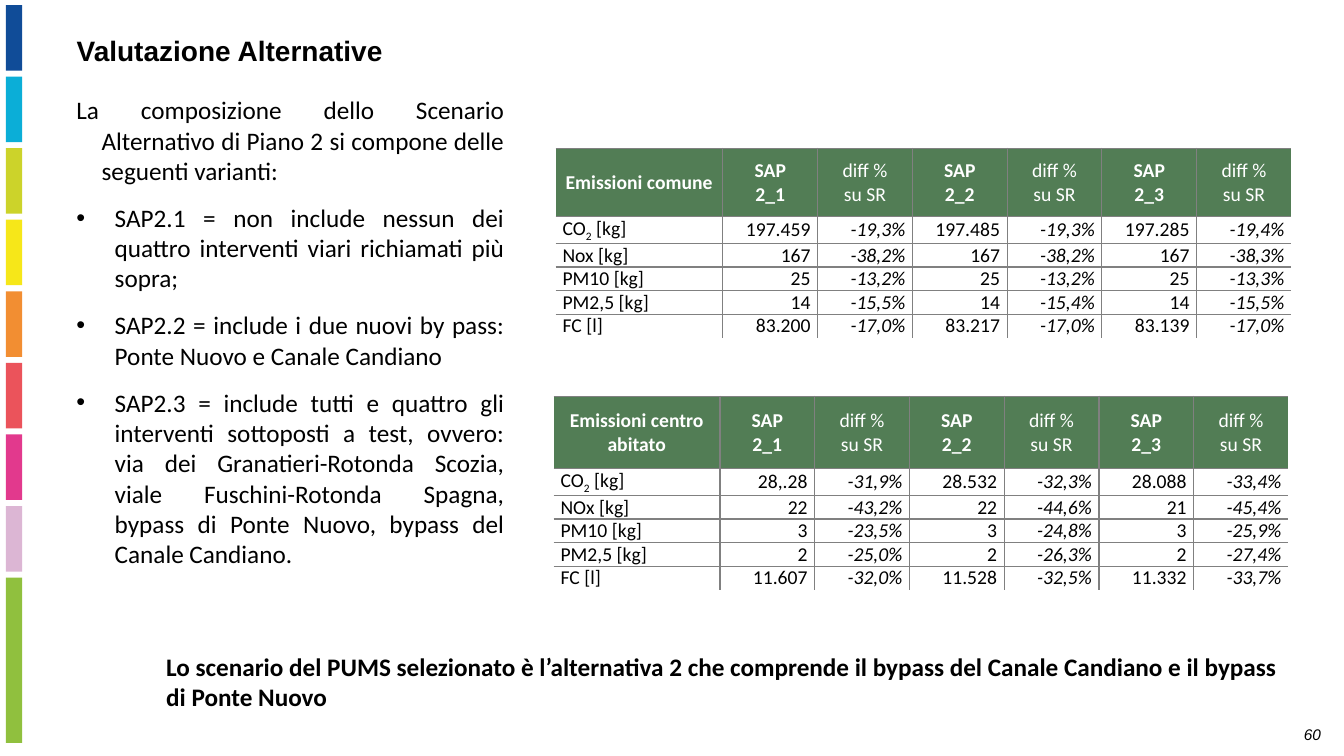
from lxml.etree import SubElement
from pptx import Presentation
from pptx.dml.color import RGBColor
from pptx.enum.shapes import MSO_SHAPE as Preset
from pptx.enum.text import MSO_ANCHOR as Anchor, MSO_AUTO_SIZE as AutoSize, PP_ALIGN as Align
from pptx.oxml.ns import qn
from pptx.util import Inches, Pt

BLACK, WHITE, GREEN, GREY = "000000", "FFFFFF", "527D55", "808080"
PLAIN_TABLE = "{2D5ABB26-0587-4C30-8999-92F81FD0307C}"
STRIPES = ["104C98", "0BAED7", "CCD32A", "F6E719", "F28E32",
           "EB535B", "E2398D", "DCB6D4", "90C03E"]
HEADINGS = ["SAP 2_1", "diff % su SR", "SAP 2_2", "diff % su SR", "SAP 2_3", "diff % su SR"]
INTRO = "La composizione dello Scenario Alternativo di Piano 2 si compone delle seguenti varianti:"
VARIANTS = [
    "SAP2.1 = non include nessun dei quattro interventi viari richiamati più sopra;",
    "SAP2.2 = include i due nuovi by pass: Ponte Nuovo e Canale Candiano",
    "SAP2.3 = include tutti e quattro gli interventi sottoposti a test, ovvero: via dei "
    "Granatieri-Rotonda Scozia, viale Fuschini-Rotonda Spagna, bypass di Ponte Nuovo, "
    "bypass del Canale Candiano.",
]
CONCLUSION = ("Lo scenario del PUMS selezionato è l’alternativa 2 che comprende il bypass "
              "del Canale Candiano e il bypass di Ponte Nuovo")
COMUNE = [
    ["CO2 [kg]", "197.459", "-19,3%", "197.485", "-19,3%", "197.285", "-19,4%"],
    ["Nox [kg]", "167", "-38,2%", "167", "-38,2%", "167", "-38,3%"],
    ["PM10 [kg]", "25", "-13,2%", "25", "-13,2%", "25", "-13,3%"],
    ["PM2,5 [kg]", "14", "-15,5%", "14", "-15,4%", "14", "-15,5%"],
    ["FC [l]", "83.200", "-17,0%", "83.217", "-17,0%", "83.139", "-17,0%"],
]
CENTRO = [
    ["CO2 [kg]", "28,.28", "-31,9%", "28.532", "-32,3%", "28.088", "-33,4%"],
    ["NOx [kg]", "22", "-43,2%", "22", "-44,6%", "21", "-45,4%"],
    ["PM10 [kg]", "3", "-23,5%", "3", "-24,8%", "3", "-25,9%"],
    ["PM2,5 [kg]", "2", "-25,0%", "2", "-26,3%", "2", "-27,4%"],
    ["FC [l]", "11.607", "-32,0%", "11.528", "-32,5%", "11.332", "-33,7%"],
]


def rgb(value):
    return RGBColor.from_string(value)


def apply(target, formats):
    for key, value in formats.items():
        setattr(target, key, value)


def write(paragraph, text, size, color=BLACK, align=Align.LEFT, name="Calibri", **formats):
    run = paragraph.add_run()
    run.text = text
    paragraph.alignment = align
    apply(run.font, dict(name=name, size=Pt(size), **formats))
    run.font.color.rgb = rgb(color)
    return run


def add_text_frame(slide, box):
    frame = slide.shapes.add_textbox(*map(Inches, box)).text_frame
    apply(frame, {"word_wrap": True, "auto_size": AutoSize.SHAPE_TO_FIT_TEXT})
    return frame


def add_stripes(slide, box):
    left, top, width, height = box
    step = 0.71
    for index, color in enumerate(STRIPES):
        y = top + index * step
        tall = top + height - y if index == len(STRIPES) - 1 else 0.65
        stripe = slide.shapes.add_shape(Preset.RECTANGLE, *map(Inches, (left, y, width, tall)))
        stripe.shadow.inherit = False
        stripe.fill.solid()
        stripe.fill.fore_color.rgb = rgb(color)
        stripe.line.fill.background()


def add_title(slide, box):
    title = slide.shapes.title
    apply(title, dict(zip(("left", "top", "width", "height"), map(Inches, box))))
    apply(title.text_frame, {"vertical_anchor": Anchor.TOP, "word_wrap": True,
                             "auto_size": AutoSize.NONE})
    heading = title.text_frame.paragraphs[0]
    heading.line_spacing = 0.8
    write(heading, "Valutazione Alternative", 20, name="Arial", bold=True)


def add_variants(slide, box):
    frame = add_text_frame(slide, box)
    for index, text in enumerate([INTRO] + VARIANTS):
        paragraph = frame.paragraphs[0] if index == 0 else frame.add_paragraph()
        hang = Inches(0.38 if index else 0.25)
        properties = paragraph._p.get_or_add_pPr()
        properties.set("marL", str(hang))
        properties.set("indent", str(-hang))
        if index:
            SubElement(properties, qn("a:buFont"), typeface="Arial")
            SubElement(properties, qn("a:buChar"), char="•")
            paragraph.space_before = Pt(6)
        paragraph.space_after = Pt(6)
        write(paragraph, text, 18, align=Align.JUSTIFY)


def set_borders(cell, visible):
    properties = cell._tc.get_or_add_tcPr()
    for side in "LRTB":
        line = SubElement(properties, qn(f"a:ln{side}"), w=str(Pt(1)))
        if side in visible:
            SubElement(SubElement(line, qn("a:solidFill")), qn("a:srgbClr"), val=GREY)
        else:
            SubElement(line, qn("a:noFill"))


def fill_header(cell, text, column):
    cell.fill.solid()
    cell.fill.fore_color.rgb = rgb(GREEN)
    if column:
        apply(cell, {"margin_left": Inches(0.16), "margin_right": Inches(0.16)})
    write(cell.text_frame.paragraphs[0], text, 14, WHITE, Align.CENTER,
          bold=not text.startswith("diff"))


def fill_value(cell, text, column):
    cell.fill.background()
    paragraph = cell.text_frame.paragraphs[0]
    if text.startswith("CO2"):
        write(paragraph, "CO", 14)
        write(paragraph, "2", 14).font._element.set("baseline", "-25000")
        write(paragraph, text[3:], 14)
    else:
        write(paragraph, text, 14, align=Align.RIGHT if column else Align.LEFT,
              italic=column > 0 and column % 2 == 0)


def add_emissions(slide, box, heading, values, header_height):
    rows = [[heading] + HEADINGS] + values
    last_row, last_column = len(rows) - 1, len(HEADINGS)
    frame = slide.shapes.add_table(len(rows), last_column + 1, *map(Inches, box))
    table = frame.table
    apply(table, {"first_row": False, "horz_banding": False})
    table._tbl.tblPr.find(qn("a:tableStyleId")).text = PLAIN_TABLE
    data_width = 0.94
    for column, part in enumerate(table.columns):
        part.width = Inches(data_width if column else box[2] - last_column * data_width)
    for row, texts in enumerate(rows):
        table.rows[row].height = Inches(0.21 if row else header_height)
        for column, text in enumerate(texts):
            cell = table.cell(row, column)
            apply(cell, {"vertical_anchor": Anchor.MIDDLE, "margin_left": Inches(0.07),
                         "margin_right": Inches(0.07), "margin_top": 0, "margin_bottom": 0})
            set_borders(cell, "T" + "L" * (column > 0) + "R" * (column < last_column)
                        + "B" * (row < last_row))
            (fill_value if row else fill_header)(cell, text, column)


def add_conclusion(slide, box):
    write(add_text_frame(slide, box).paragraphs[0], CONCLUSION, 18, bold=True)


def add_page_number(slide, box):
    write(add_text_frame(slide, box).paragraphs[0], "60", 11, align=Align.RIGHT,
          name="Arial", italic=True)


def main():
    deck = Presentation()
    apply(deck, {"slide_width": Inches(13.33), "slide_height": Inches(7.5)})
    slide = deck.slides.add_slide(deck.slide_layouts[5])
    add_stripes(slide, (0.06, 0.05, 0.16, 7.32))
    add_page_number(slide, (12.02, 7.14, 1.18, 0.29))
    add_title(slide, (0.66, 0.35, 10.43, 0.6))
    add_variants(slide, (0.66, 0.89, 4.44, 4.85))
    add_emissions(slide, (5.51, 1.47, 7.3, 1.85), "Emissioni comune", COMUNE, 0.68)
    add_emissions(slide, (5.49, 3.93, 7.29, 1.89), "Emissioni centro abitato", CENTRO, 0.72)
    add_conclusion(slide, (1.55, 6.41, 11.43, 0.71))
    deck.save("out.pptx")


if __name__ == "__main__":
    main()
